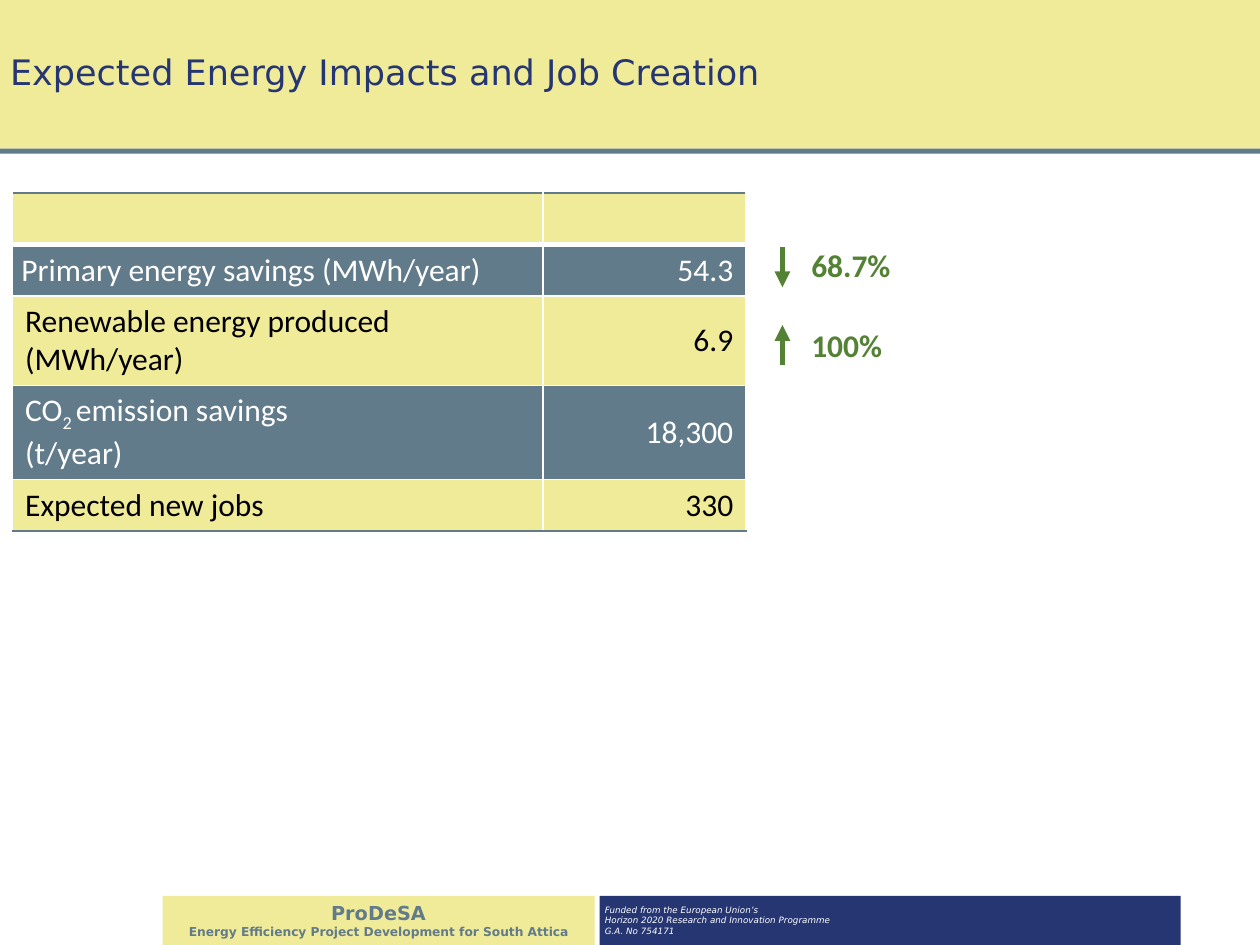
from lxml.etree import SubElement
from pptx import Presentation
from pptx.dml.color import RGBColor
from pptx.enum.shapes import MSO_CONNECTOR, MSO_SHAPE
from pptx.enum.text import MSO_ANCHOR, MSO_AUTO_SIZE, PP_ALIGN
from pptx.oxml.ns import qn
from pptx.util import Inches, Pt

COLORS = {
    "cream": "F0EB99",
    "slate": "627B8B",
    "navy": "263673",
    "green": "548235",
    "white": "FFFFFF",
    "black": "000000",
}
HEADING_FONT, BODY_FONT = "DejaVu Sans", "Calibri"
COLUMNS, ROWS = 100, 75
WIDTH, HEIGHT = Inches(10), Inches(7.5)


class SlideBuilder:
    def __init__(self, deck):
        self.page = deck.slides.add_slide(deck.slide_layouts[5])

    def x(self, columns):
        return round(WIDTH * columns / COLUMNS)

    def y(self, rows):
        return round(HEIGHT * rows / ROWS)

    def area(self, left, top, width, height):
        return self.x(left), self.y(top), self.x(width), self.y(height)

    def color(self, name):
        return RGBColor.from_string(COLORS[name])

    def fill(self, item, name):
        item.fill.solid()
        item.fill.fore_color.rgb = self.color(name)

    def style(self, para, size, color, font=BODY_FONT, bold=False, italic=False, align=PP_ALIGN.LEFT):
        para.alignment = align
        for span in para.runs:
            span.font.name = font
            span.font.size = Pt(size)
            span.font.bold = bold
            span.font.italic = italic
            span.font.color.rgb = self.color(color)

    def inset(self, frame, margin):
        frame.margin_left = frame.margin_right = Inches(margin)
        frame.margin_top = frame.margin_bottom = Inches(margin)
        frame.vertical_anchor = MSO_ANCHOR.MIDDLE
        frame.word_wrap = True

    def title(self, text, area, color, fill):
        box = self.page.shapes.title
        box.left, box.top, box.width, box.height = self.area(*area)
        self.fill(box, fill)
        frame = box.text_frame
        frame.text = text
        frame.auto_size = MSO_AUTO_SIZE.NONE
        self.inset(frame, 0.08)
        para = frame.paragraphs[0]
        para.line_spacing = 0.9
        self.style(para, 20, color, HEADING_FONT)

    def panel(self, area, fill, lines=(), **look):
        box = self.page.shapes.add_shape(MSO_SHAPE.RECTANGLE, *self.area(*area))
        box.shadow.inherit = False
        box.line.fill.background()
        self.fill(box, fill)
        frame = box.text_frame
        self.inset(frame, 0.04)
        frame.text = "\n".join(text for text, size in lines)
        for para, (text, size) in zip(frame.paragraphs, lines):
            self.style(para, size, font=HEADING_FONT, **look)

    def arrow(self, column, start, end, color):
        line = self.page.shapes.add_connector(
            MSO_CONNECTOR.STRAIGHT, self.x(column), self.y(start), self.x(column), self.y(end))
        line.line.color.rgb = self.color(color)
        line.line.width = Pt(3)
        SubElement(line.line._get_or_add_ln(), qn("a:tailEnd"), type="triangle")
        SubElement(line._element.spPr, qn("a:effectLst"))

    def label(self, text, area, color):
        box = self.page.shapes.add_textbox(*self.area(*area))
        box.text_frame.word_wrap = True
        box.text_frame.text = text
        self.style(box.text_frame.paragraphs[0], 18, color, bold=True)

    def borders(self, cell, top, bottom):
        properties = cell._tc.get_or_add_tcPr()
        edges = {"L": ("white", 1), "R": ("white", 1), "T": top, "B": bottom}
        for side, (color, width) in edges.items():
            line = SubElement(properties, qn(f"a:ln{side}"), w=str(Pt(width)))
            solid = SubElement(line, qn("a:solidFill"))
            SubElement(solid, qn("a:srgbClr"), val=COLORS[color])

    def table(self, records, left, top, widths, heights):
        table = self.page.shapes.add_table(
            len(records), len(widths),
            *self.area(left, top, sum(widths), sum(heights))).table
        table.first_row = table.horz_banding = False
        for column, width in zip(table.columns, widths):
            column.width = self.x(width)
        for row, height in zip(table.rows, heights):
            row.height = self.y(height)
        last = len(records) - 1
        thin = ("white", 1)
        for i, record in enumerate(records):
            fill, ink = ("slate", "white") if i % 2 else ("cream", "black")
            above = ("slate", 1) if i == 0 else ("white", 3) if i == 1 else thin
            below = ("white", 3) if i == 0 else ("slate", 1) if i == last else thin
            for j, text in enumerate(record):
                cell = table.cell(i, j)
                self.borders(cell, above, below)
                self.fill(cell, fill)
                cell.vertical_anchor = MSO_ANCHOR.MIDDLE
                cell.text = text
                for para in cell.text_frame.paragraphs:
                    self.style(para, 18, ink, align=PP_ALIGN.RIGHT if j else PP_ALIGN.LEFT)
        return table

    def subscript(self, cell, parts, index):
        para = cell.text_frame.paragraphs[0]
        color = para.runs[0].font.color.rgb
        para.runs[0].text = parts[0]
        for part in parts[1:]:
            span = para.add_run()
            span.text = part
            span.font.name = BODY_FONT
            span.font.size = Pt(18)
            span.font.color.rgb = color
        para.runs[index].font._element.set("baseline", "-25000")

    def tighten(self, cell):
        cell.margin_left = cell.margin_right = Inches(0.07)
        cell.margin_top = cell.margin_bottom = Inches(0.02)
        para = cell.text_frame.paragraphs[0]
        para.space_before, para.space_after = Pt(0), Pt(4)


def main():
    deck = Presentation()
    deck.slide_width, deck.slide_height = WIDTH, HEIGHT
    slide = SlideBuilder(deck)

    slide.title("Expected Energy Impacts and Job Creation", (0, 0, 100, 11.8), "navy", "cream")
    slide.panel((0, 11.8, 100, 0.4), "slate")

    impacts = [
        ("", ""),
        ("Primary energy savings (MWh/year)", "54.3"),
        ("Renewable energy produced (MWh/year)", "6.9"),
        ("CO2 emission savings\n(t/year)", "18,300"),
        ("Expected new jobs", "330"),
    ]
    table = slide.table(impacts, 1, 15.3, (42.1, 16.1), (4.1, 4.1, 7.1, 7.4, 4.1))
    slide.tighten(table.cell(1, 0))
    slide.subscript(table.cell(3, 0), ("CO", "2 ", "emission savings"), 1)

    for text, row, start, end in (("68.7%", 19, 19.6, 22.8), ("100%", 25.4, 29, 25.8)):
        slide.arrow(62.1, start, end, "green")
        slide.label(text, (63.4, row, 8.5, 4), "green")

    slide.panel(
        (12.9, 71.1, 34.3, 3.9), "cream",
        [("ProDeSA", 11), ("Energy Efficiency Project Development for South Attica", 7)],
        color="slate", bold=True, align=PP_ALIGN.CENTER)
    funding = ("Funded from the European Union’s",
               "Horizon 2020 Research and Innovation Programme",
               "G.A. No 754171")
    slide.panel((47.6, 71.1, 46.1, 3.9), "navy", [(text, 5) for text in funding],
                color="white", italic=True)

    deck.save("out.pptx")


if __name__ == "__main__":
    main()
